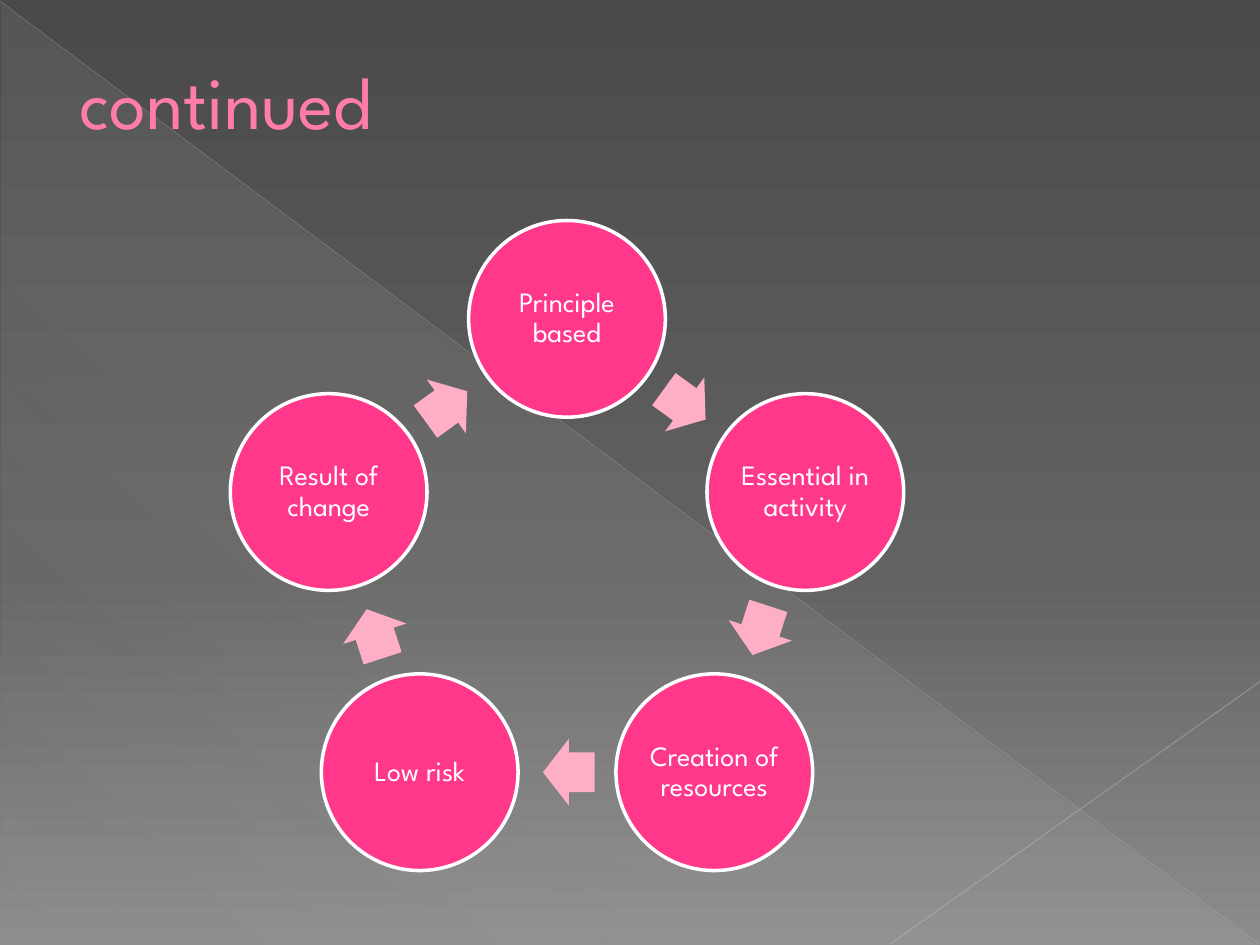
from math import cos, sin, radians

from lxml.etree import SubElement
from pptx import Presentation
from pptx.dml.color import RGBColor
from pptx.enum.shapes import MSO_CONNECTOR, MSO_SHAPE
from pptx.enum.text import MSO_ANCHOR, PP_ALIGN
from pptx.oxml.ns import qn
from pptx.util import Pt

# Content
TITLE = "continued"
STEPS = ["Principle based", "Essential in activity", "Creation of resources",
         "Low risk", "Result of change"]

THEME = {
    "font": "League Spartan", "title_size": 42, "step_size": 16,
    "title": "FF7DA7", "title_edge": "B12761",
    "circle": "FF388C", "arrow": "FFAFC5", "white": "FFFFFF",
    # gradient stops: position %, colour, opacity %
    "backdrop": [(0, "4A4A4A", 100), (60, "626262", 100), (100, "8C8C8C", 100)],
    "sheen": [(0, "D2D2D2", 10), (70, "D2D2D2", 8), (100, "D2D2D2", 1)],
}
# Backdrop lines: from, to, colour, width, opacity %
RULES = [((0, 0.7), (719.3, 539.3), "BFBFBF", 0.39, 35),
         ((720, 389.5), (509, 539.3), "C6C6C6", 0.47, 45)]

# Cycle geometry
CENTER_X, CENTER_Y, RADIUS = 324, 325.4, 143.2
CIRCLE = 112.4
ARROW_W, ARROW_H, ARROW_BACK = 29.5, 38, 1


def set_all(obj, **values):
    for name, value in values.items():
        setattr(obj, name, value)


def rgb(value):
    return RGBColor.from_string(value)


def add_alpha(clr, opacity):
    SubElement(clr, qn("a:alpha"), val=str(opacity * 1000))


def add_color(parent, color, opacity=100):
    clr = SubElement(parent, qn("a:srgbClr"), val=color)
    if opacity < 100:
        add_alpha(clr, opacity)


def fill_gradient(fill, props, stops, angle):
    fill.gradient()
    grad = props.find(qn("a:gradFill"))
    for child in list(grad):
        grad.remove(child)
    gs_list = SubElement(grad, qn("a:gsLst"))
    for pos, color, opacity in stops:
        add_color(SubElement(gs_list, qn("a:gs"), pos=str(pos * 1000)), color, opacity)
    SubElement(grad, qn("a:lin"), ang=str(angle * 60000), scaled="0")


def add_shape(s, kind, x, y, w, h, color=None):
    sp = s.shapes.add_shape(kind, Pt(x), Pt(y), Pt(w), Pt(h))
    sp.shadow.inherit = False
    sp.line.fill.background()
    if color:
        sp.fill.solid()
        sp.fill.fore_color.rgb = rgb(color)
    return sp


def add_centered(s, kind, cx, cy, w, h, color):
    return add_shape(s, kind, cx - w / 2, cy - h / 2, w, h, color)


def write(sp, text, size, color, align, insets):
    tf = sp.text_frame
    left, top, right, bottom = map(Pt, insets)
    set_all(tf, word_wrap=True, vertical_anchor=MSO_ANCHOR.MIDDLE, margin_left=left,
            margin_top=top, margin_right=right, margin_bottom=bottom)
    p = tf.paragraphs[0]
    p.alignment = align
    r = p.add_run()
    r.text = text
    set_all(r.font, name=THEME["font"], size=Pt(size))
    r.font.color.rgb = rgb(color)
    return p


def on_cycle(angle, radius):
    a = radians(angle)
    return CENTER_X + radius * sin(a), CENTER_Y - radius * cos(a)


def add_backdrop(s):
    fill = s.background.fill
    fill.solid()
    fill_gradient(fill, s.element.find(".//" + qn("p:bgPr")), THEME["backdrop"], 90)
    sheen = add_shape(s, MSO_SHAPE.RIGHT_TRIANGLE, 0.7, 1.4, 718.6, 538.6)
    fill_gradient(sheen.fill, sheen.element.spPr, THEME["sheen"], 133)
    for start, end, color, width, opacity in RULES:
        line = s.shapes.add_connector(MSO_CONNECTOR.STRAIGHT, *map(Pt, start + end))
        line.line.width = Pt(width)
        line.line.color.rgb = rgb(color)
        props = line.element.spPr
        add_alpha(props.find(".//" + qn("a:srgbClr")), opacity)
        SubElement(props, qn("a:effectLst"))


def add_title(s):
    box = s.shapes.add_textbox(Pt(0), Pt(12.2), Pt(648), Pt(90))
    write(box, TITLE, THEME["title_size"], THEME["title"],
          PP_ALIGN.LEFT, (45.4, 3.6, 7.2, 3.6))
    # Thin outline on the letters; it must come first in the run properties
    props = box.element.find(".//" + qn("a:rPr"))
    edge = SubElement(props, qn("a:ln"), w=str(int(Pt(0.5))))
    add_color(SubElement(edge, qn("a:solidFill")), THEME["title_edge"])
    props.insert(0, edge)


def add_cycle(s):
    turn = 360 / len(STEPS)
    for i, step in enumerate(STEPS):
        # Step circle
        cx, cy = on_cycle(i * turn, RADIUS)
        sp = add_centered(s, MSO_SHAPE.OVAL, cx, cy, CIRCLE, CIRCLE, THEME["circle"])
        sp.line.color.rgb = rgb(THEME["white"])
        sp.line.width = Pt(2)
        p = write(sp, step, THEME["step_size"], THEME["white"],
                  PP_ALIGN.CENTER, (1.6,) * 4)
        p.line_spacing = 0.9

        # Arrow midway to the next step, pulled slightly back
        angle = (i + 0.5) * turn
        ax, ay = on_cycle(angle, RADIUS * cos(radians(turn / 2)))
        ax -= ARROW_BACK * cos(radians(angle))
        ay -= ARROW_BACK * sin(radians(angle))
        arrow = add_centered(s, MSO_SHAPE.RIGHT_ARROW, ax, ay, ARROW_W, ARROW_H,
                             THEME["arrow"])
        arrow.rotation = angle
        arrow.adjustments[0], arrow.adjustments[1] = 0.6, 0.5


def main():
    prs = Presentation()
    set_all(prs, slide_width=Pt(720), slide_height=Pt(540))
    s = prs.slides.add_slide(prs.slide_layouts[6])
    add_backdrop(s)
    add_title(s)
    add_cycle(s)
    prs.save("out.pptx")


if __name__ == "__main__":
    main()
